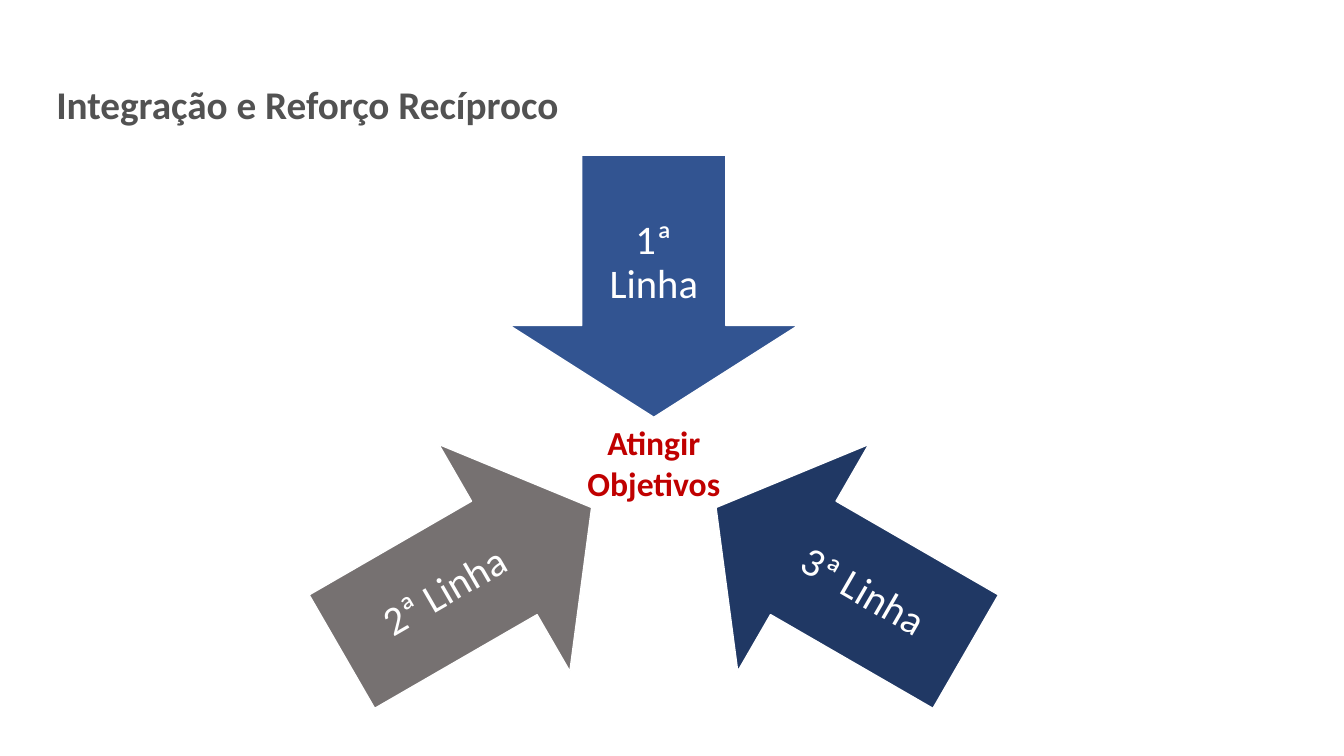
from pptx import Presentation
from pptx.dml.color import RGBColor
from pptx.enum.shapes import MSO_SHAPE
from pptx.enum.text import MSO_ANCHOR, PP_ALIGN
from pptx.util import Inches, Pt

DOWN, LEFT_ARROW, RIGHT_ARROW = MSO_SHAPE.DOWN_ARROW, MSO_SHAPE.LEFT_ARROW, MSO_SHAPE.RIGHT_ARROW
TOP, MIDDLE = MSO_ANCHOR.TOP, MSO_ANCHOR.MIDDLE
LEFT, CENTER = PP_ALIGN.LEFT, PP_ALIGN.CENTER

WHITE, RED, GRAY = "FFFFFF", "C00000", "525252"
ARROW_WIDTH, ARROW_HEIGHT = 2.86, 2.6


def color(hex_string):
    return RGBColor.from_string(hex_string)


def write_text(shape, text, size, font_color, bold=False, align=CENTER,
               anchor=TOP, line_spacing=None):
    frame = shape.text_frame
    frame.word_wrap = True
    frame.vertical_anchor = anchor
    paragraph = frame.paragraphs[0]
    paragraph.alignment = align
    paragraph.line_spacing = line_spacing
    run = paragraph.add_run()
    run.text = text
    run.font.name = "Calibri"
    run.font.size = Pt(size)
    run.font.bold = bold
    run.font.color.rgb = color(font_color)


def add_text(slide, box, text, **text_format):
    shape = slide.shapes.add_textbox(*map(Inches, box))
    write_text(shape, text, **text_format)


def add_arrow(slide, left, top, kind, text, fill, head, rotation=0):
    """Draw a block arrow; head is its head length in inches."""
    shape = slide.shapes.add_shape(kind, Inches(left), Inches(top),
                                   Inches(ARROW_WIDTH), Inches(ARROW_HEIGHT))
    shape.adjustments[0] = 0.5
    shape.adjustments[1] = head / ARROW_HEIGHT
    shape.rotation = rotation
    shape.shadow.inherit = False
    shape.fill.solid()
    shape.fill.fore_color.rgb = color(fill)
    shape.line.color.rgb = color(WHITE)
    shape.line.width = Pt(1)
    frame = shape.text_frame
    frame.margin_left = frame.margin_right = Inches(0.2)
    frame.margin_top = frame.margin_bottom = Inches(0.2)
    write_text(shape, text, 29, WHITE, anchor=MIDDLE, line_spacing=0.9)


def add_converging_arrows(slide, left, top, width, height):
    """Place three arrows that point at the shared goal between them."""
    right = left + width - ARROW_WIDTH
    bottom = top + height - ARROW_HEIGHT
    add_arrow(slide, (left + right) / 2, top, DOWN, "1ª Linha", "325491", head=0.91)
    add_arrow(slide, right, bottom, LEFT_ARROW, "3ª Linha", "203864", head=1, rotation=30)
    add_arrow(slide, left, bottom, RIGHT_ARROW, "2ª Linha", "767171", head=1, rotation=330)
    goal_width = 2.23
    goal_box = (left + (width - goal_width) / 2, top + ARROW_HEIGHT, goal_width, 0.91)
    add_text(slide, goal_box, "Atingir Objetivos", size=24, font_color=RED, bold=True)


def main():
    presentation = Presentation()
    presentation.slide_width = Inches(13.33)
    presentation.slide_height = Inches(7.5)
    slide = presentation.slides.add_slide(presentation.slide_layouts[6])
    add_converging_arrows(slide, 3.2, 1.54, 6.57, 5.51)
    add_text(slide, (0.46, 0.8, 9.19, 0.87), "Integração e Reforço Recíproco",
             size=28, font_color=GRAY, bold=True, align=LEFT, line_spacing=0.9)
    presentation.save("out.pptx")


if __name__ == "__main__":
    main()
